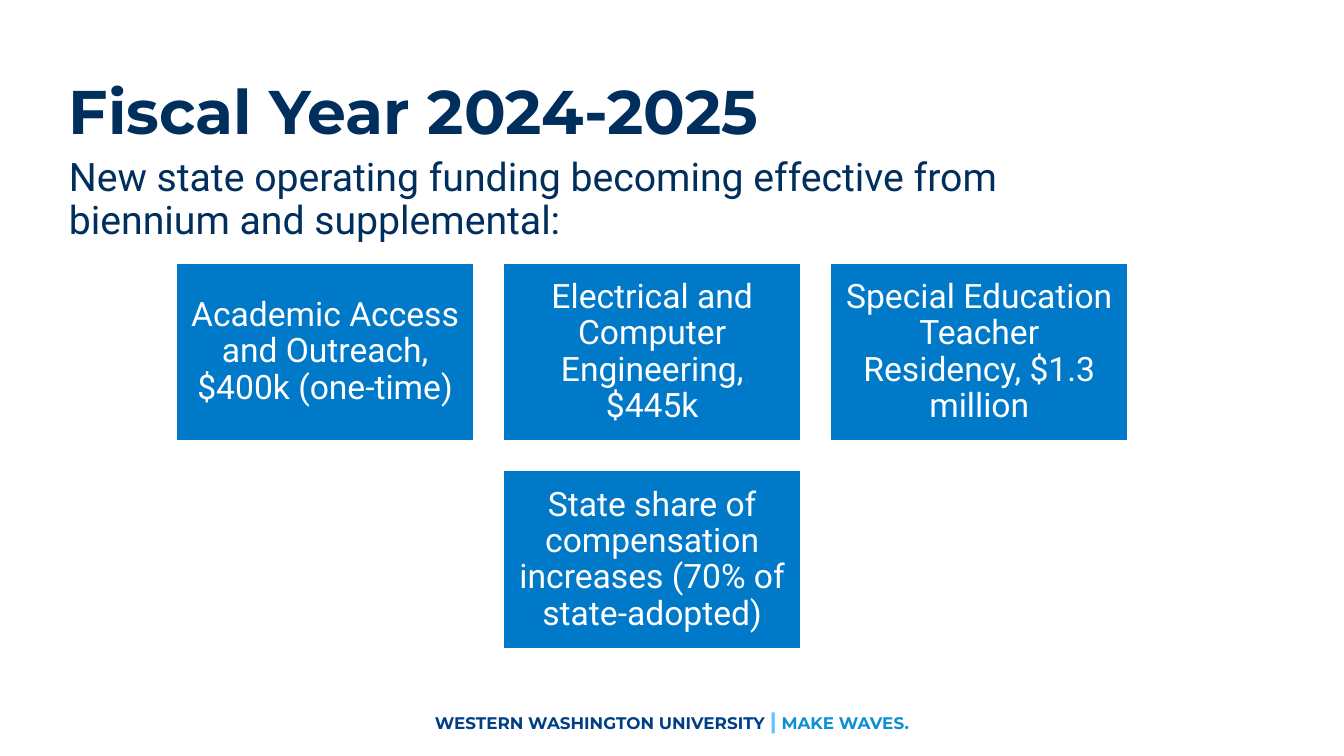
from lxml.etree import SubElement
from pptx import Presentation
from pptx.dml.color import RGBColor
from pptx.enum.shapes import MSO_SHAPE
from pptx.enum.text import MSO_ANCHOR, MSO_AUTO_SIZE, PP_ALIGN
from pptx.oxml.ns import qn
from pptx.util import Inches, Pt


def color(code):
    return RGBColor.from_string(code)


class Deck:
    cols, rows = 160, 90
    head, text = "Montserrat", "Roboto"
    navy, blue, white = "002F5E", "0079C8", "FFFFFF"

    def __init__(self):
        self.file = Presentation()
        self.file.slide_width = Inches(13.33)
        self.file.slide_height = Inches(7.5)
        self.slide = self.file.slides.add_slide(self.file.slide_layouts[1])

    def box(self, x, y, w, h):
        unit_x = self.file.slide_width / self.cols
        unit_y = self.file.slide_height / self.rows
        return [int(n) for n in (x * unit_x, y * unit_y, w * unit_x, h * unit_y)]

    def place(self, shape, area):
        shape.left, shape.top, shape.width, shape.height = self.box(*area)

    def label(self, shape, runs, font, align, anchor, bold=False, line=0.9):
        frame = shape.text_frame
        frame.word_wrap = True
        frame.auto_size = MSO_AUTO_SIZE.NONE
        frame.vertical_anchor = anchor
        para = frame.paragraphs[0]
        para.alignment = align
        para.line_spacing = line
        para.space_before = Pt(0)
        for words, size, tint in runs:
            run = para.add_run()
            run.text = words
            run.font.name = font
            run.font.size = Pt(size)
            run.font.bold = bold
            run.font.color.rgb = color(tint)
        return para

    def title(self, words, area):
        shape = self.slide.shapes.title
        self.place(shape, area)
        self.label(shape, [(words, 44, self.navy)], self.head,
                   PP_ALIGN.LEFT, MSO_ANCHOR.BOTTOM, True)

    def body(self, words, area):
        shape = self.slide.placeholders[1]
        self.place(shape, area)
        para = self.label(shape, [(words, 28, self.navy)], self.text,
                          PP_ALIGN.LEFT, MSO_ANCHOR.TOP)
        props = para._p.get_or_add_pPr()
        props.set("marL", "0")
        props.set("indent", "0")
        SubElement(props, qn("a:buNone"))

    def card(self, words, area):
        shape = self.slide.shapes.add_shape(MSO_SHAPE.RECTANGLE, *self.box(*area))
        shape.shadow.inherit = False
        shape.fill.solid()
        shape.fill.fore_color.rgb = color(self.blue)
        shape.line.color.rgb = color(self.white)
        shape.line.width = Pt(1)
        frame = shape.text_frame
        frame.margin_left = frame.margin_right = Inches(0.1)
        frame.margin_top = frame.margin_bottom = Inches(0.1)
        self.label(shape, [(words, 24, self.white)], self.text,
                   PP_ALIGN.CENTER, MSO_ANCHOR.MIDDLE)

    def footer(self, runs, area):
        shape = self.slide.shapes.add_textbox(*self.box(*area))
        self.label(shape, runs, self.head, PP_ALIGN.CENTER,
                   MSO_ANCHOR.MIDDLE, True, 1.0)


def main():
    deck = Deck()
    deck.title("Fiscal Year 2024-2025", (7, 5.2, 100, 13))
    deck.body("New state operating funding becoming effective from "
              "biennium and supplemental:", (7, 18.2, 132.5, 59.3))
    deck.footer([("WESTERN WASHINGTON UNIVERSITY ", 12, "003F87"),
                 ("|", 16, "63C2FF"),
                 (" ", 12, "003F87"),
                 ("MAKE WAVES.", 12, "0C8FD3")], (0, 83.4, 160, 4.8))

    wide, high, gap = 35.4, 21.2, 3.54
    cards = [
        (0, 0, "Academic Access and Outreach, $400k (one-time)"),
        (1, 0, "Electrical and Computer Engineering, $445k"),
        (2, 0, "Special Education Teacher Residency, $1.3 million"),
        (1, 1, "State share of compensation increases (70% of state-adopted)"),
    ]
    for col, row, words in cards:
        left = 21 + col * (wide + gap)
        top = 31.3 + row * (high + gap)
        deck.card(words, (left, top, wide, high))

    deck.file.save("out.pptx")


if __name__ == "__main__":
    main()
